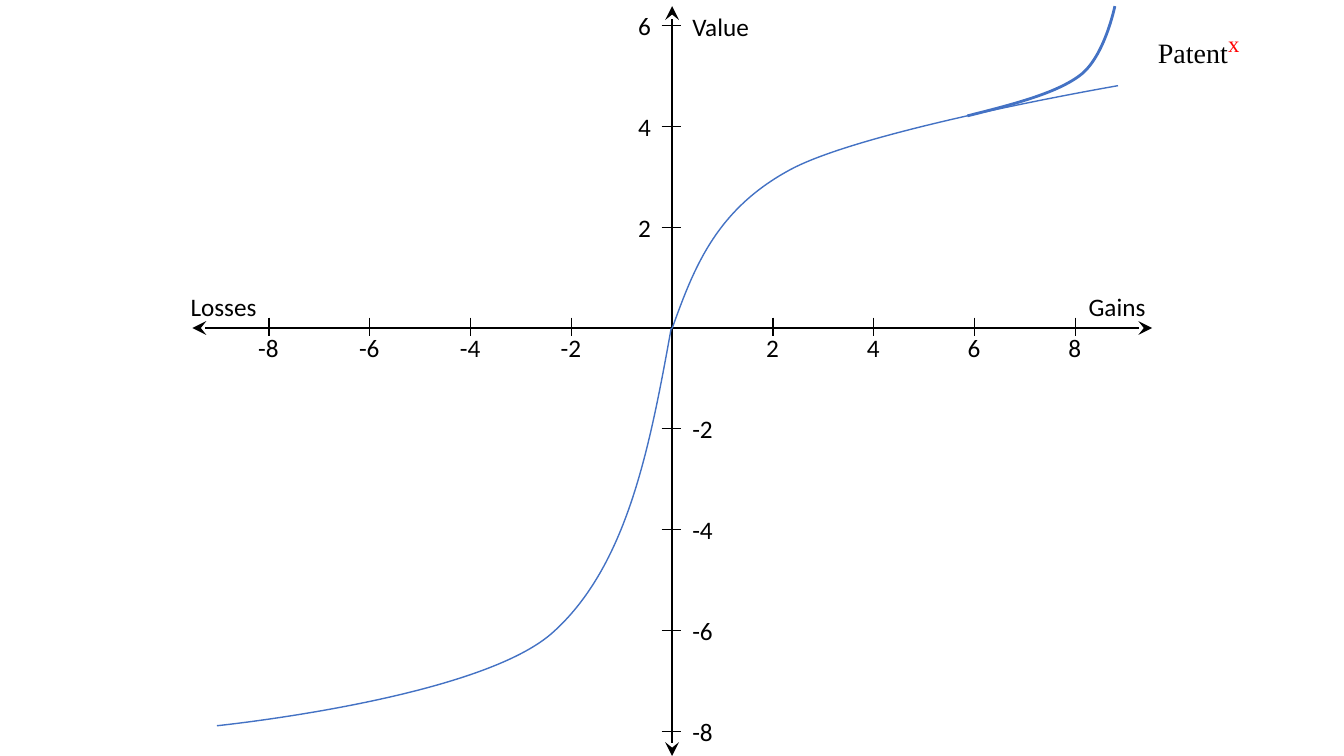
from lxml import etree
from pptx import Presentation
from pptx.dml.color import RGBColor
from pptx.enum import shapes, text
from pptx.oxml import ns
from pptx.util import Pt

BLACK = RGBColor(0, 0, 0)
RED = RGBColor(255, 0, 0)
BLUE = RGBColor(0x44, 0x72, 0xC4)

ZERO_X, ZERO_Y = 480.1, 234.3
UNIT = 36

# Start point, then two handles and an end point for each bend
LOSS = [(479.5, 234.3), (464, 320), (448, 405), (394, 452.6),
        (340, 499.5), (155, 518.4), (155, 518.4)]
GAIN = [(480.1, 234.6), (495.5, 192), (511, 150), (564.5, 121.2),
        (618, 92.3), (798.6, 61.2), (798.6, 61.2)]
PATENT = [(691, 82.8), (722, 75), (754, 67), (771.3, 54),
          (789, 41), (796.4, 4.4), (796.4, 4.4)]


def add_line(slide, x1, y1, x2, y2, arrows=False):
    line = slide.shapes.add_connector(
        shapes.MSO_CONNECTOR.STRAIGHT, Pt(x1), Pt(y1), Pt(x2), Pt(y2))
    line.line.color.rgb = BLACK
    line.line.width = Pt(1)
    props = line._element.spPr
    if arrows:
        for end in ("a:headEnd", "a:tailEnd"):
            etree.SubElement(props.find(ns.qn("a:ln")), ns.qn(end),
                             type="stealth", w="lg", len="lg")
    etree.SubElement(props, ns.qn("a:effectLst"))


def add_curve(slide, points, width):
    """Draw the points as a polygon line, then turn each three steps into a bend."""
    spots = [(Pt(x), Pt(y)) for x, y in points]
    form = slide.shapes.build_freeform(*spots[0])
    form.add_line_segments(spots[1:], close=False)
    shape = form.convert_to_shape()
    steps = list(shape._element.iter(ns.qn("a:lnTo")))
    for i in range(0, len(steps), 3):
        bend = etree.SubElement(steps[i].getparent(), ns.qn("a:cubicBezTo"))
        for step in steps[i:i + 3]:
            bend.append(step[0])
            step.getparent().remove(step)
    shape.shadow.inherit = False
    shape.fill.background()
    shape.line.color.rgb = BLUE
    shape.line.width = Pt(width)


def add_text(slide, words, x, y, width, height=29, wrap=False):
    box = slide.shapes.add_textbox(Pt(x), Pt(y), Pt(width), Pt(height))
    frame = box.text_frame
    frame.word_wrap = wrap
    frame.auto_size = text.MSO_AUTO_SIZE.SHAPE_TO_FIT_TEXT
    para = frame.paragraphs[0]
    para.text = words
    para.font.name = "Calibri"
    para.font.size = Pt(18)
    para.font.color.rgb = BLACK
    return para


def add_ticks(slide):
    for value in (-8, -6, -4, -2, 2, 4, 6, 8):
        width = 29.5 if value < 0 else 24
        x = ZERO_X + value * UNIT
        add_line(slide, x, 226.8, x, 239.8)
        add_text(slide, str(value), x - width / 2, 234, width)
        if value < 8:
            y = ZERO_Y - value * UNIT
            left = 487.4 if value < 0 else 448.8
            add_line(slide, 472.6, y, 486.6, y)
            add_text(slide, str(value), left, y - 14.5, width)


def add_patent(slide):
    para = add_text(slide, "Patent", 820, 14, 107, 31.5, wrap=True)
    power = para.add_run()
    power.text = "x"
    power._r.get_or_add_rPr().set("baseline", "30000")
    for run, size, color in zip(para.runs, (20, 28), (BLACK, RED)):
        run.font.name = "Times New Roman"
        run.font.size = Pt(size)
        run.font.color.rgb = color


def main():
    deck = Presentation()
    deck.slide_width, deck.slide_height = Pt(960), Pt(540)
    slide = deck.slides.add_slide(deck.slide_layouts[6])
    add_patent(slide)
    add_line(slide, 137.5, ZERO_Y, 823, ZERO_Y, arrows=True)
    add_line(slide, ZERO_X, 4.4, ZERO_X, 540, arrows=True)
    add_curve(slide, LOSS, 1)
    add_curve(slide, GAIN, 1)
    add_ticks(slide)
    add_text(slide, "Gains", 770.5, 204.5, 56)
    add_text(slide, "Losses", 129, 204.5, 62)
    add_text(slide, "Value", 487.5, 4.5, 56)
    add_curve(slide, PATENT, 2)
    deck.save("out.pptx")


if __name__ == "__main__":
    main()
